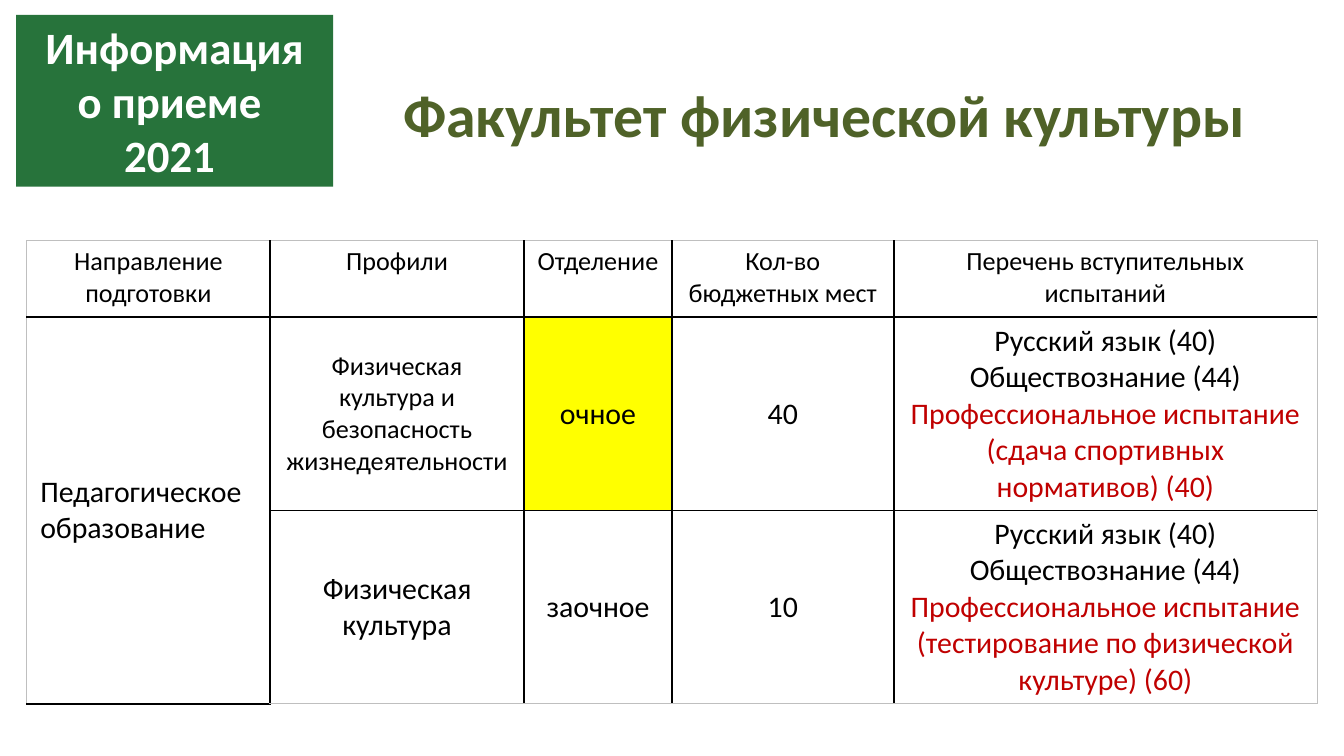
from lxml import etree
from pptx import Presentation
from pptx.dml.color import RGBColor
from pptx.enum.shapes import MSO_SHAPE
from pptx.enum.text import MSO_ANCHOR, PP_ALIGN
from pptx.oxml.ns import qn
from pptx.util import Inches, Pt

RECT = MSO_SHAPE.RECTANGLE
TOP, MIDDLE = MSO_ANCHOR.TOP, MSO_ANCHOR.MIDDLE
LEFT, CENTER = PP_ALIGN.LEFT, PP_ALIGN.CENTER

BADGE = "Информация\vо приеме \v2021 "
TITLE = "Факультет физической культуры"
EXAMS = ["Русский язык (40)", "Обществознание (44)"]
ROWS = [
    ["Направление подготовки", "Профили", "Отделение",
     "Кол-во бюджетных мест", "Перечень вступительных испытаний"],
    ["Педагогическое образование",
     "Физическая культура и безопасность жизнедеятельности", "очное", "40",
     "\n".join(EXAMS + ["Профессиональное испытание (сдача спортивных нормативов) (40)"])],
    ["", "Физическая культура", "заочное", "10",
     "\n".join(EXAMS + ["Профессиональное испытание (тестирование по физической культуре) (60)"])],
]
WIDTHS = [1.81, 1.89, 1.1, 1.65, 3.15]
HEIGHTS = [0.57, 1.43, 1.43]
SMALL = {(1, 1)}
YELLOW = {(1, 2)}


def color(code):
    return RGBColor.from_string(code)


def style(par, size, code, bold=False, align=CENTER):
    par.alignment = align
    for run in par.runs:
        font = run.font
        font.name, font.size, font.bold = "Calibri", Pt(size), bold
        font.color.rgb = color(code)


def border(cell, r, c):
    props = cell._tc.get_or_add_tcPr()
    outer = {"lnL": c == 0, "lnR": c == len(WIDTHS) - 1,
             "lnT": r == 0, "lnB": r == len(ROWS) - 1}
    for side, edge in outer.items():
        line = etree.SubElement(props, qn("a:" + side), w=str(Pt(0.5 if edge else 1)))
        fill = etree.SubElement(line, qn("a:solidFill"))
        etree.SubElement(fill, qn("a:srgbClr"), val="BFBFBF" if edge else "000000")


def add_badge(slide):
    badge = slide.shapes.add_shape(RECT, Inches(0.12), Inches(0.11), Inches(2.36), Inches(1.28))
    badge.shadow.inherit = False
    badge.fill.solid()
    badge.fill.fore_color.rgb = color("27733B")
    badge.line.fill.background()
    frame = badge.text_frame
    frame.text = BADGE
    frame.word_wrap = True
    frame.vertical_anchor = MIDDLE
    style(frame.paragraphs[0], 24, "FFFFFF", True)


def add_title(slide):
    title = slide.shapes.title
    title.left, title.top = Inches(2.77), Inches(0.53)
    title.width, title.height = Inches(6.73), Inches(0.64)
    frame = title.text_frame
    frame.text = TITLE
    frame.vertical_anchor = TOP
    style(frame.paragraphs[0], 32, "4F6228", True)


def add_grid(slide):
    grid = slide.shapes.add_table(
        len(ROWS), len(WIDTHS), Inches(0.2), Inches(1.79),
        Inches(sum(WIDTHS)), Inches(sum(HEIGHTS))).table
    grid.first_row = grid.horz_banding = False
    for col, width in zip(grid.columns, WIDTHS):
        col.width = Inches(width)
    for row, height in zip(grid.rows, HEIGHTS):
        row.height = Inches(height)
    for r, row in enumerate(ROWS):
        for c, text in enumerate(row):
            cell = grid.cell(r, c)
            cell.text = text
            cell.vertical_anchor = MIDDLE if r else TOP
            cell.margin_top = cell.margin_bottom = Inches(0.04)
            border(cell, r, c)
            if (r, c) in YELLOW:
                cell.fill.solid()
                cell.fill.fore_color.rgb = color("FFFF00")
            else:
                cell.fill.background()
            size = 14 if r == 0 or (r, c) in SMALL else 16
            align = LEFT if r and c == 0 else CENTER
            for n, par in enumerate(cell.text_frame.paragraphs):
                style(par, size, "C00000" if n == len(EXAMS) else "000000", align=align)
    grid.cell(1, 0).merge(grid.cell(2, 0))


def main():
    deck = Presentation()
    deck.slide_width = Inches(10)
    deck.slide_height = deck.slide_width * 9 // 16
    slide = deck.slides.add_slide(deck.slide_layouts[5])
    add_badge(slide)
    add_title(slide)
    add_grid(slide)
    deck.save("out.pptx")


if __name__ == "__main__":
    main()
